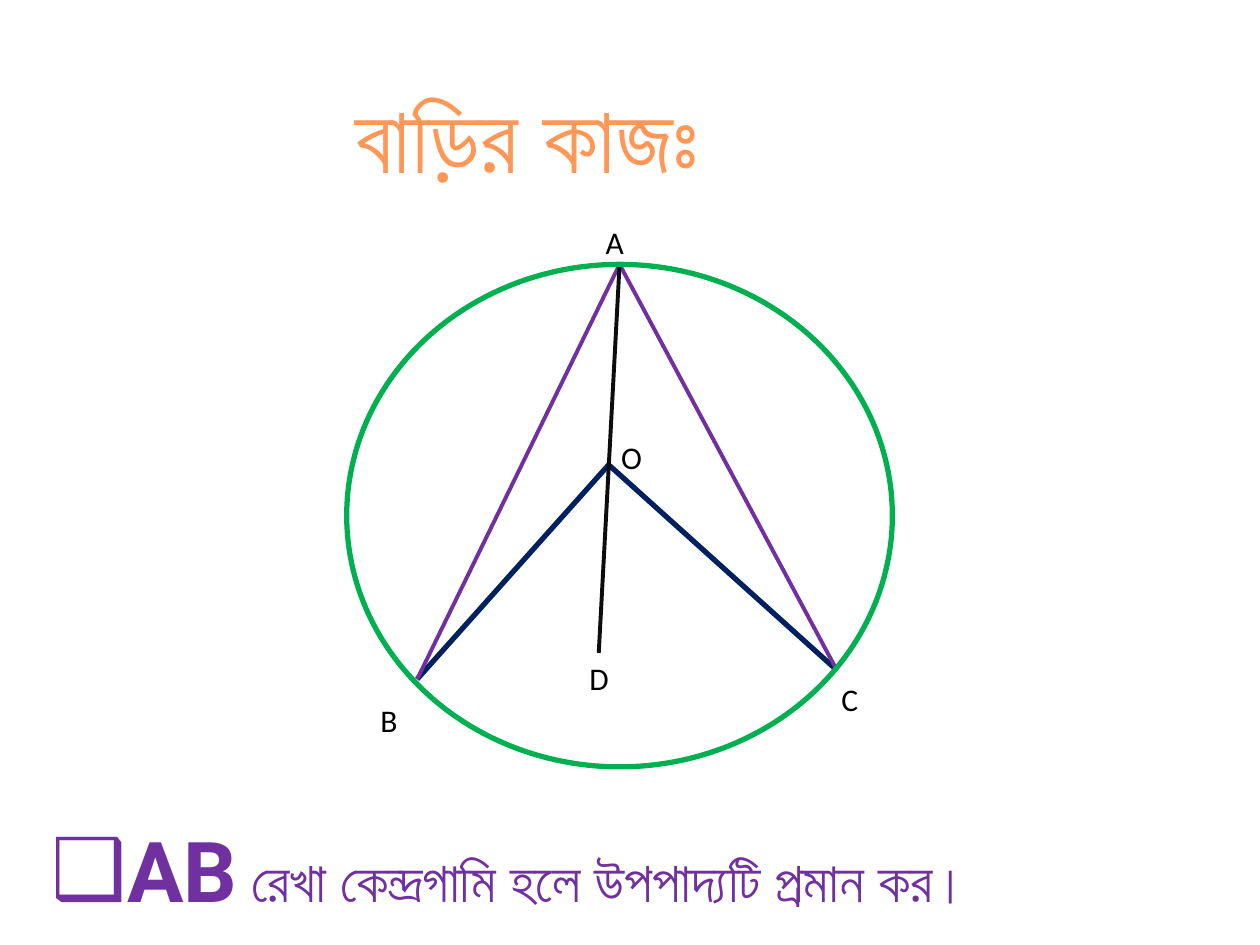
from dataclasses import dataclass

from lxml import etree
from pptx import Presentation
from pptx import util as u
from pptx.dml.color import RGBColor
from pptx.enum import shapes, text
from pptx.oxml import ns


@dataclass(frozen=True)
class Theme:
    heading_font: str = "Roboto"
    label_font: str = "Calibri"
    orange: str = "FF9856"
    purple: str = "7030A0"
    navy: str = "002060"
    green: str = "00B050"
    ink: str = "0D0D0D"
    black: str = "000000"
    title_size: int = 54
    lead_size: int = 48
    body_size: int = 32
    label_size: int = 18
    thick: float = 3
    thin: float = 2.25


THEME = Theme()


def place(item, left, top, width, height):
    item.left, item.top = u.Cm(left), u.Cm(top)
    item.width, item.height = u.Cm(width), u.Cm(height)


def prepare_frame(item):
    frame = item.text_frame
    frame.word_wrap = True
    frame.auto_size = text.MSO_AUTO_SIZE.NONE
    frame.vertical_anchor = text.MSO_ANCHOR.TOP
    para = frame.paragraphs[0]
    para.alignment = text.PP_ALIGN.LEFT
    para.space_before = u.Pt(0)
    return para


def add_text(para, words, *, font, size, color, bold=False):
    span = para.add_run()
    span.text = words
    span.font.name = font
    span.font.size = u.Pt(size)
    span.font.bold = bold
    span.font.color.rgb = RGBColor.from_string(color)


def set_bullet(para, symbol, indent):
    properties = para._p.get_or_add_pPr()
    properties.set("marL", str(u.Cm(indent)))
    properties.set("indent", str(-u.Cm(indent)))
    etree.SubElement(properties, ns.qn("a:buFont"), typeface="Arial")
    etree.SubElement(properties, ns.qn("a:buChar"), char=symbol)


def add_title(page, box):
    place(page.shapes.title, *box)
    add_text(prepare_frame(page.shapes.title), "বাড়ির কাজঃ", font=THEME.heading_font,
             size=THEME.title_size, color=THEME.orange, bold=True)


def add_task(page, box):
    body = page.placeholders[1]
    place(body, *box)
    para = prepare_frame(body)
    set_bullet(para, "❑", 0.79)
    style = dict(font=THEME.heading_font, color=THEME.purple)
    add_text(para, "AB", size=THEME.lead_size, bold=True, **style)
    add_text(para, " রেখা কেন্দ্রগামি হলে উপপাদ্যটি প্রমান কর।", size=THEME.body_size, **style)


def add_circle_figure(page, box):
    left, top, width, height = box
    # Points of the figure, measured from the corner of the circle's box
    points = {"A": (width / 2, 0), "O": (5.28, 4.04), "B": (1.42, 8.36),
              "C": (9.88, 8.18), "D": (5.08, 7.83)}
    segments = [("OC", THEME.navy, THEME.thick), ("OB", THEME.navy, THEME.thick),
                ("AB", THEME.purple, THEME.thin), ("AC", THEME.purple, THEME.thin),
                ("AD", THEME.ink, THEME.thin)]
    for (start, end), color, weight in segments:
        ends = [u.Cm(base + offset) for name in (start, end)
                for base, offset in zip((left, top), points[name])]
        line = page.shapes.add_connector(shapes.MSO_CONNECTOR.STRAIGHT, *ends)
        line.line.color.rgb = RGBColor.from_string(color)
        line.line.width = u.Pt(weight)
        etree.SubElement(line._element.spPr, ns.qn("a:effectLst"))

    # Circle
    circle = page.shapes.add_shape(shapes.MSO_SHAPE.OVAL, *map(u.Cm, box))
    circle.shadow.inherit = False
    circle.fill.background()
    circle.line.color.rgb = RGBColor.from_string(THEME.green)
    circle.line.width = u.Pt(THEME.thick)

    # Point labels: name, left, top, width
    for name, x, y, label_width in [("A", 4.97, -0.96, 0.84), ("O", 5.28, 3.38, 0.84),
                                    ("B", 0.43, 8.67, 1.27), ("C", 9.72, 8.26, 0.64),
                                    ("D", 4.64, 7.83, 0.84)]:
        label = page.shapes.add_textbox(
            *map(u.Cm, (left + x, top + y, label_width, 1.03)))
        add_text(prepare_frame(label), name, font=THEME.label_font,
                 size=THEME.label_size, color=THEME.black)


def main():
    deck = Presentation()
    deck.slide_width, deck.slide_height = u.Cm(25.4), u.Cm(19.05)
    page = deck.slides.add_slide(deck.slide_layouts[1])
    add_title(page, (6.91, 1.47, 10.13, 2.57))
    add_task(page, (0.79, 16.38, 23.83, 2.31))
    add_circle_figure(page, (6.99, 5.33, 11, 10.13))
    deck.save("out.pptx")


if __name__ == "__main__":
    main()
